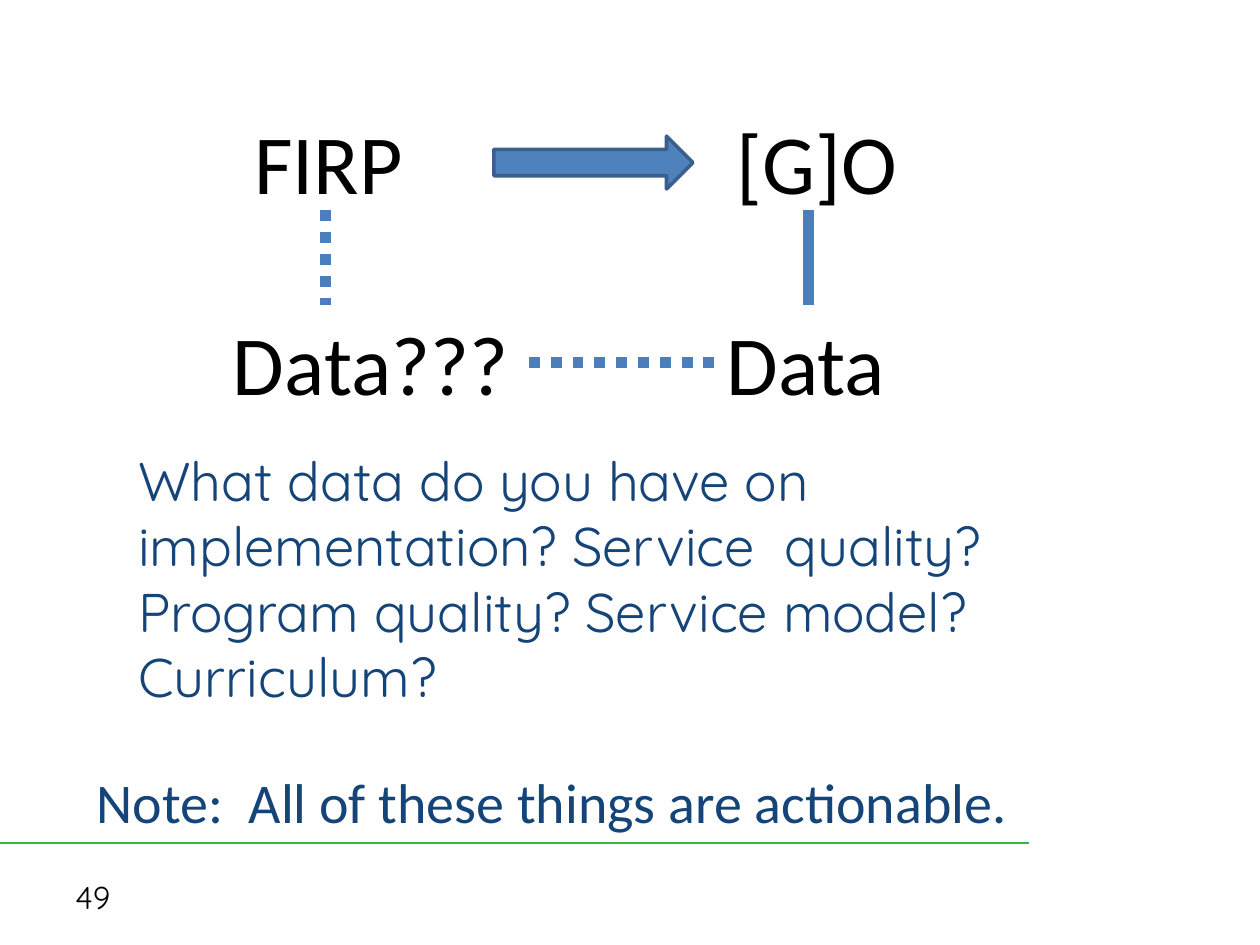
from lxml.etree import SubElement
from pptx import Presentation
from pptx.dml.color import RGBColor
from pptx.enum.dml import MSO_LINE
from pptx.enum.shapes import MSO_CONNECTOR, MSO_SHAPE
from pptx.enum.text import MSO_ANCHOR
from pptx.oxml.ns import qn
from pptx.util import Inches, Pt

# Content: text, left, top, width, height, style
TEXTS = [
    ("49", 0.5, 6.92, 2.33, 0.4, "page"),
    ("What data do you have on implementation? Service  quality? "
     "Program quality? Service model? Curriculum?", 1, 3.5, 8.75, 2.25, "ask"),
    ("Note:  All of these things are actionable.", 0.67, 6.04, 8.25, 0.64, "note"),
    ("[G]O", 5.75, 0.83, 2.33, 0.91, "node"),
    ("FIRP", 1.92, 0.83, 1.5, 0.91, "node"),
    ("Data", 5.67, 2.42, 2.25, 0.91, "node"),
    ("Data???", 1.75, 2.42, 2.42, 0.91, "node"),
]
# Lines: x1, y1, x2, y2, style
RULES = [
    (0, 6.69, 8.17, 6.69, "base"),
    (6.42, 1.67, 6.42, 2.42, "solid"),
    (2.58, 1.67, 2.58, 2.42, "dots"),
    (5.67, 2.87, 4.17, 2.87, "dots"),
]
ARROW = (3.92, 1.08, 1.58, 0.42)

THEME = {
    "text": {
        "page": {"name": "Quicksand", "size": 18, "color": "000000"},
        "ask": {"name": "Quicksand", "size": 31.1, "color": "154578"},
        "note": {"name": "Calibri", "size": 32, "color": "154578"},
        "node": {"name": "Calibri", "size": 48, "color": "000000"},
    },
    "line": {
        "base": ("39B54A", 1.5, None),
        "solid": ("4B7EBC", 6.25, None),
        "dots": ("4B7EBC", 6.25, MSO_LINE.ROUND_DOT),  # written as sysDot
        "edge": ("3A5F8C", 2, None),
    },
    "arrow": "4F81BD",
}

deck = Presentation()
deck.slide_width, deck.slide_height = Inches(10), Inches(7.5)
slide = deck.slides.add_slide(deck.slide_layouts[6])
shapes = slide.shapes


def rgb(code):
    return RGBColor.from_string(code)


def write(text, *place, style):
    box = shapes.add_textbox(*map(Inches, place))
    frame = box.text_frame
    frame.word_wrap = True
    if style == "page":
        frame.vertical_anchor = MSO_ANCHOR.MIDDLE
    frame.text = text
    font = frame.paragraphs[0].runs[0].font
    look = THEME["text"][style]
    values = {"name": look["name"], "size": Pt(look["size"]), "bold": False}
    for key, value in values.items():
        setattr(font, key, value)
    font.color.rgb = rgb(look["color"])
    return box


def stroke(line, style):
    color, width, dash = THEME["line"][style]
    line.color.rgb = rgb(color)
    line.width = Pt(width)
    if dash:
        line.dash_style = dash


def rule(*ends, style):
    link = shapes.add_connector(MSO_CONNECTOR.STRAIGHT, *map(Inches, ends))
    stroke(link.line, style)
    SubElement(link._element.spPr, qn("a:effectLst"))
    return link


# Words
boxes = {}
for text, *place, style in TEXTS:
    boxes[text] = write(text, *place, style=style)

# Lines; the last one joins the two data labels
links = [rule(*ends, style=style) for *ends, style in RULES]
links[-1].begin_connect(boxes["Data"], 1)
links[-1].end_connect(boxes["Data???"], 3)

# Block arrow from FIRP to [G]O
arrow = shapes.add_shape(MSO_SHAPE.RIGHT_ARROW, *map(Inches, ARROW))
arrow.shadow.inherit = False
arrow.fill.solid()
arrow.fill.fore_color.rgb = rgb(THEME["arrow"])
stroke(arrow.line, "edge")

deck.save("out.pptx")
